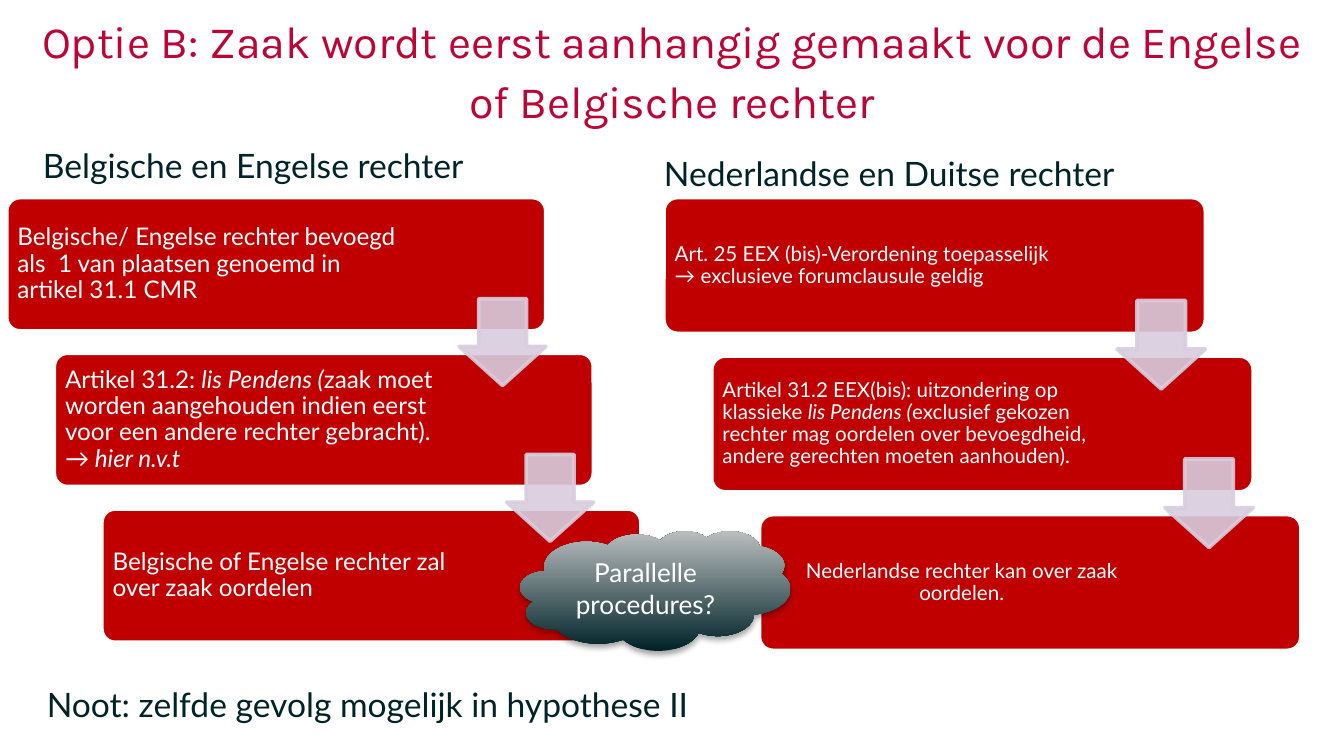
from lxml.etree import SubElement
from pptx import Presentation
from pptx.dml.color import RGBColor
from pptx.enum.shapes import MSO_SHAPE as Shape
from pptx.enum.text import MSO_ANCHOR as Anchor, MSO_AUTO_SIZE as AutoSize, PP_ALIGN as Align
from pptx.oxml.ns import qn
from pptx.util import Inches, Pt

CRIMSON = RGBColor(0xBC, 0x04, 0x36)
RED = RGBColor(0xC0, 0x00, 0x00)
INK = RGBColor(0x00, 0x23, 0x28)
GREY = RGBColor(0xBB, 0xBE, 0xBF)
LILAC = RGBColor(0xD8, 0xCD, 0xDE)
WHITE = RGBColor(0xFF, 0xFF, 0xFF)

LEFT_STEPS = [
    [("Belgische/ Engelse rechter bevoegd als  1 van plaatsen genoemd in artikel 31.1 CMR", False)],
    [("Artikel 31.2: ", False), ("lis Pendens (", True),
     ("zaak moet worden aangehouden indien eerst voor een andere rechter gebracht). ", False),
     ("→ hier n.v.t", True)],
    [("Belgische of Engelse rechter zal over zaak oordelen", False)],
]
RIGHT_STEPS = [
    [("Art. 25 EEX (bis)-Verordening toepasselijk → exclusieve forumclausule geldig", False)],
    [("Artikel 31.2 EEX(bis): uitzondering op klassieke ", False), ("lis Pendens (", True),
     ("exclusief gekozen rechter mag oordelen over bevoegdheid, "
      "andere gerechten moeten aanhouden).", False)],
    [("Nederlandse rechter kan over zaak oordelen.", False)],
]


def place(part, box):
    part.left, part.top, part.width, part.height = (Inches(length) for length in box)


def write(part, spans, size, color, font="Lato", align=Align.LEFT, anchor=Anchor.TOP,
          inset=None, spacing=None):
    frame = part.text_frame
    frame.word_wrap = True
    frame.auto_size = AutoSize.NONE
    frame.vertical_anchor = anchor
    if inset is not None:
        frame.margin_left = frame.margin_right = Inches(inset)
        frame.margin_top = frame.margin_bottom = Inches(inset)
    paragraph = frame.paragraphs[0]
    paragraph.alignment = align
    if spacing is not None:
        paragraph.line_spacing = spacing
    for text, italic in spans:
        run = paragraph.add_run()
        run.text = text
        run.font.name = font
        run.font.size = Pt(size)
        run.font.italic = italic
        run.font.color.rgb = color


def add_text(shapes, box, spans, size, color, **style):
    label = shapes.add_textbox(*(Inches(length) for length in box))
    write(label, spans, size, color, **style)


def add_filled(shapes, kind, box, fill, line, adjustments):
    part = shapes.add_shape(kind, *(Inches(length) for length in box))
    part.shadow.inherit = False
    part.fill.solid()
    part.fill.fore_color.rgb = fill
    part.line.color.rgb = line
    part.line.width = Pt(2)
    for index, value in enumerate(adjustments):
        part.adjustments[index] = value
    return part


def add_title(slide, box):
    title = slide.shapes.title
    place(title, box)
    write(title, [("Optie B: Zaak wordt eerst aanhangig gemaakt voor de Engelse of Belgische rechter",
                   False)],
          24, CRIMSON, font="Karla", align=Align.CENTER, inset=0, spacing=Pt(32))


def add_heading(slide, box, text):
    add_text(slide.shapes, box, [(text, False)], 18, INK, inset=0, spacing=Pt(23))


def add_staircase(slide, box, steps, size, last_align):
    left, top, width, height = box
    card_width, card_height = 0.85 * width, 0.3 * height
    shift, drop = 0.075 * width, 0.35 * height
    arrow_size = 0.65 * card_height
    stairs = slide.shapes.add_group_shape().shapes
    for index, spans in enumerate(steps):
        x, y = left + index * shift, top + index * drop
        add_filled(stairs, Shape.ROUNDED_RECTANGLE, (x, y, card_width, card_height),
                   RED, WHITE, [0.1])
        align = last_align if index == len(steps) - 1 else Align.LEFT
        add_text(stairs, (x + 0.03, y + 0.03, 2.95, card_height - 0.06), spans, size, WHITE,
                 align=align, anchor=Anchor.MIDDLE, inset=0.05, spacing=0.9)
    for index in range(len(steps) - 1):
        x = left + index * shift + card_width - arrow_size
        y = top + index * drop + 0.2275 * height
        arrow = add_filled(stairs, Shape.DOWN_ARROW, (x, y, arrow_size, arrow_size),
                           LILAC, LILAC, [0.55, 0.45])
        for color in arrow.element.spPr.iter(qn("a:srgbClr")):
            SubElement(color, qn("a:alpha"), val="90000")


def add_cloud(slide, box):
    cloud = slide.shapes.add_shape(Shape.CLOUD, *(Inches(length) for length in box))
    cloud.line.fill.background()
    cloud.fill.gradient()
    cloud.fill.gradient_angle = 90
    for stop, color in zip(cloud.fill.gradient_stops, (INK, GREY)):
        stop.color.rgb = color
    cloud.shadow.inherit = False
    effects = cloud.element.spPr.find(qn("a:effectLst"))
    shadow = SubElement(effects, qn("a:outerShdw"), blurRad=str(Pt(3.1)), dist=str(Pt(1.8)),
                        dir="5400000", rotWithShape="0")
    shade = SubElement(shadow, qn("a:srgbClr"), val="000000")
    SubElement(shade, qn("a:alpha"), val="35000")
    write(cloud, [("Parallelle procedures?", False)], 14, WHITE,
          align=Align.CENTER, anchor=Anchor.MIDDLE)


def add_note(slide, box):
    add_text(slide.shapes, box, [("Noot: zelfde gevolg mogelijk in hypothese II", False)], 18, INK)


def main():
    deck = Presentation()
    deck.slide_width = Inches(10)
    deck.slide_height = deck.slide_width * 9 // 16
    slide = deck.slides.add_slide(deck.slide_layouts[5])
    add_title(slide, (0.25, 0.06, 9.5, 0.63))
    add_heading(slide, (0.32, 1.06, 4.37, 0.35), "Belgische en Engelse rechter")
    add_staircase(slide, (0.05, 1.47, 4.72, 3.31), LEFT_STEPS, 13, Align.LEFT)
    add_heading(slide, (4.94, 1.12, 4.39, 0.35), "Nederlandse en Duitse rechter")
    add_staircase(slide, (4.94, 1.47, 4.74, 3.37), RIGHT_STEPS, 11, Align.CENTER)
    add_note(slide, (0.25, 5.04, 5.71, 0.4))
    add_cloud(slide, (3.87, 3.95, 2.01, 0.89))
    deck.save("out.pptx")


if __name__ == "__main__":
    main()
